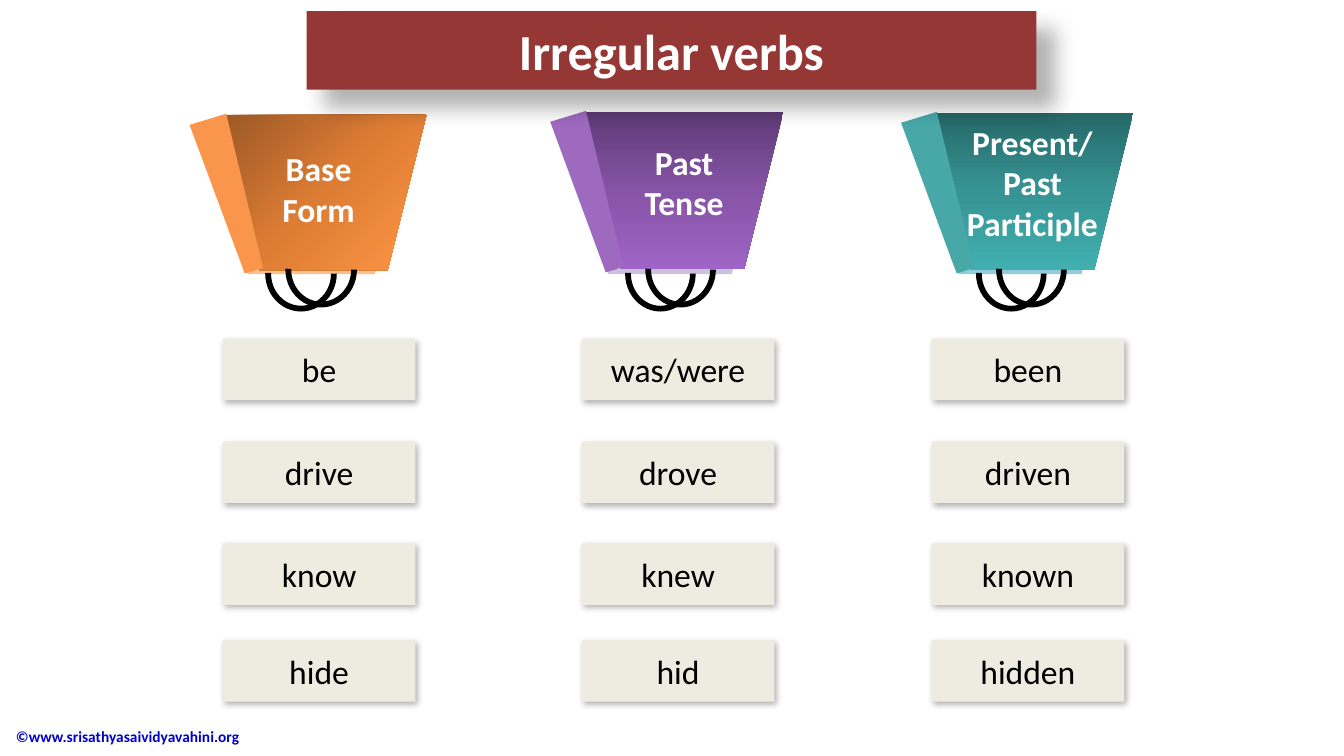
from dataclasses import dataclass

from lxml.etree import SubElement
from pptx import Presentation
from pptx.dml.color import RGBColor
from pptx.enum.shapes import MSO_SHAPE as Preset
from pptx.enum.text import MSO_ANCHOR as Anchor, MSO_AUTO_SIZE as AutoSize, PP_ALIGN as Align
from pptx.oxml.ns import qn
from pptx.shapes.autoshape import Shape
from pptx.slide import Slide
from pptx.util import Emu, Pt

EMU_PER_PX = 9144


@dataclass(frozen=True)
class Theme:
    font: str = "Calibri"
    title_size: int = 36
    word_size: int = 24
    credit_size: int = 11
    banner: str = "953735"
    card: str = "EEECE1"
    light: str = "FFFFFF"
    dark: str = "000000"
    credit: str = "0000CC"


@dataclass(frozen=True)
class Box:
    left: int
    top: int
    width: int
    height: int

    def emu(self) -> tuple[Emu, ...]:
        return tuple(Emu(px * EMU_PER_PX)
                     for px in (self.left, self.top, self.width, self.height))


@dataclass(frozen=True)
class Shadow:
    blur: float
    distance: float
    angle: int
    opacity: int = 30


@dataclass(frozen=True)
class Bag:
    heading: tuple[str, ...]
    heading_box: Box
    front: Box
    lip: str
    side: str
    gradient: tuple[str, str, str]
    angle: int
    card_left: int
    verbs: tuple[str, ...]


THEME = Theme()
BANNER_SHADOW = Shadow(15, 18, 45)
CARD_SHADOW = Shadow(4.5, 2.6, 53)
CARD_TOPS = (336, 438, 539, 635)
BAGS = (
    Bag(("Base Form",), Box(249, 142, 134, 91), Box(219, 114, 204, 154),
        "FAC090", "F9964B", ("9B5825", "DD7D34", "FF9545"), 45,
        221, ("be", "drive", "know", "hide")),
    Bag(("Past Tense",), Box(620, 136, 117, 91), Box(577, 111, 200, 156),
        "CCC1DA", "9E6ABF", ("5E3B75", "8654A6", "9F64C5"), 90,
        577, ("was/were", "drove", "knew", "hid")),
    Bag(("Present/", "Past Participle"), Box(939, 116, 170, 132), Box(925, 112, 199, 156),
        "93CDDD", "48A8A8", ("266868", "379494", "41AFAF"), 90,
        924, ("been", "driven", "known", "hidden")),
)


def write(shape: Shape, *lines: str, size: int, color: str, bold: bool = False,
          align: Align = Align.CENTER, anchor: Anchor = Anchor.MIDDLE) -> None:
    frame = shape.text_frame
    frame.auto_size = AutoSize.NONE
    frame.word_wrap = True
    frame.vertical_anchor = anchor
    frame.text = "\n".join(lines)
    for paragraph in frame.paragraphs:
        paragraph.alignment = align
        font = paragraph.font
        font.name, font.size, font.bold = THEME.font, Pt(size), bold
        font.color.rgb = RGBColor.from_string(color)


def paint(shape: Shape, color: str) -> None:
    shape.fill.solid()
    shape.fill.fore_color.rgb = RGBColor.from_string(color)
    shape.line.fill.background()
    shape.shadow.inherit = False


def cast_shadow(shape: Shape, shadow: Shadow) -> None:
    effects = shape.element.spPr.find(qn("a:effectLst"))
    outer = SubElement(effects, qn("a:outerShdw"), blurRad=str(Pt(shadow.blur)),
                       dist=str(Pt(shadow.distance)), dir=str(shadow.angle * 60000),
                       algn="tl", rotWithShape="0")
    tint = SubElement(outer, qn("a:srgbClr"), val=THEME.dark)
    SubElement(tint, qn("a:alpha"), val=str(shadow.opacity * 1000))


def shade(shape: Shape, colors: tuple[str, ...], angle: int) -> None:
    shape.fill.gradient()
    gradient = shape.element.spPr.find(qn("a:gradFill"))
    gradient.set("rotWithShape", "0")
    for child in list(gradient):
        gradient.remove(child)
    stops = SubElement(gradient, qn("a:gsLst"))
    for index, color in enumerate(colors):
        stop = SubElement(stops, qn("a:gs"), pos=str(index * 50000))
        SubElement(stop, qn("a:srgbClr"), val=color)
    SubElement(gradient, qn("a:lin"), ang=str(angle * 60000), scaled="0")


def add_preset(slide: Slide, preset: Preset, box: Box, color: str,
               rotation: float = 0) -> Shape:
    shape = slide.shapes.add_shape(preset, *box.emu())
    shape.rotation = rotation
    paint(shape, color)
    return shape


def add_bag(slide: Slide, bag: Bag) -> None:
    front = bag.front

    def scaled(px: int) -> int:
        return round(px * front.width / 200)

    lip = Box(front.left + scaled(25), 267, scaled(125), 5)
    add_preset(slide, Preset.TRAPEZOID, lip, bag.lip, 180)
    panel = add_preset(slide, Preset.TRAPEZOID, front, bag.side, 180)
    shade(panel, bag.gradient, bag.angle)
    side = Box(front.left - 9, front.top + 1, scaled(37), front.height + 3)
    add_preset(slide, Preset.TRAPEZOID, side, bag.side, 163.1)
    for offset, top in ((63, 230), (43, 234)):
        loop = Box(front.left + scaled(offset), top, scaled(70), 75)
        handle = add_preset(slide, Preset.BLOCK_ARC, loop, THEME.dark, 180)
        for index, value in enumerate((108, 0.925, 0.081)):
            handle.adjustments[index] = value
    heading = slide.shapes.add_textbox(*bag.heading_box.emu())
    write(heading, *bag.heading, size=THEME.word_size, color=THEME.light,
          bold=True, anchor=Anchor.TOP)


def add_cards(slide: Slide, bag: Bag) -> None:
    for top, verb in zip(CARD_TOPS, bag.verbs):
        card = add_preset(slide, Preset.RECTANGLE, Box(bag.card_left, top, 191, 61), THEME.card)
        cast_shadow(card, CARD_SHADOW)
        write(card, verb, size=THEME.word_size, color=THEME.dark)


def add_banner(slide: Slide) -> None:
    banner = slide.shapes.title
    banner.left, banner.top, banner.width, banner.height = Box(304, 11, 724, 78).emu()
    outline = SubElement(banner.element.spPr, qn("a:prstGeom"), prst="roundRect")
    SubElement(outline, qn("a:avLst"))
    paint(banner, THEME.banner)
    cast_shadow(banner, BANNER_SHADOW)
    write(banner, "Irregular verbs", size=THEME.title_size, color=THEME.light, bold=True)
    banner.element.getparent().append(banner.element)


def main() -> None:
    deck = Presentation()
    deck.slide_width, deck.slide_height = Emu(1333 * EMU_PER_PX), Emu(750 * EMU_PER_PX)
    slide = deck.slides.add_slide(deck.slide_layouts.get_by_name("Title Only"))
    credit = slide.shapes.add_textbox(*Box(6, 710, 353, 41).emu())
    write(credit, "©www.srisathyasaividyavahini.org", size=THEME.credit_size,
          color=THEME.credit, bold=True, align=Align.LEFT)
    for bag in BAGS:
        add_bag(slide, bag)
    for bag in BAGS:
        add_cards(slide, bag)
    add_banner(slide)
    deck.save("out.pptx")


if __name__ == "__main__":
    main()
